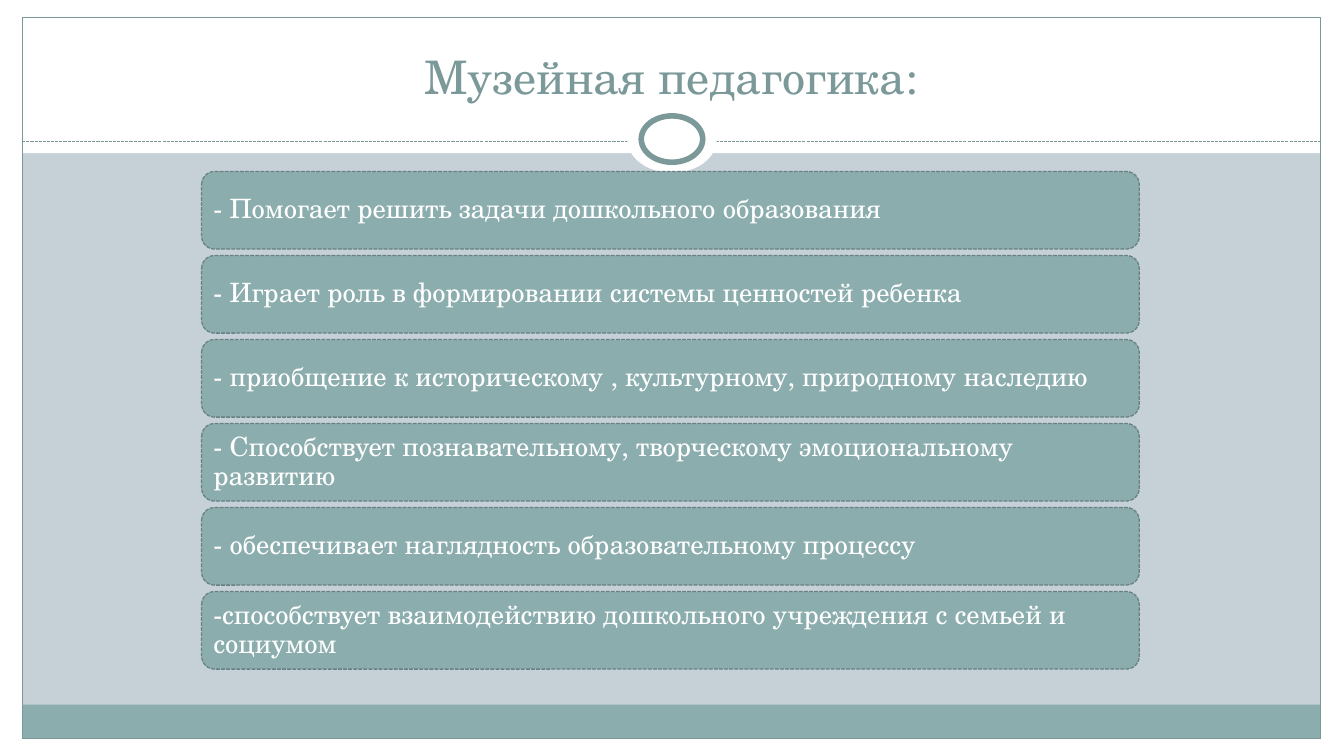
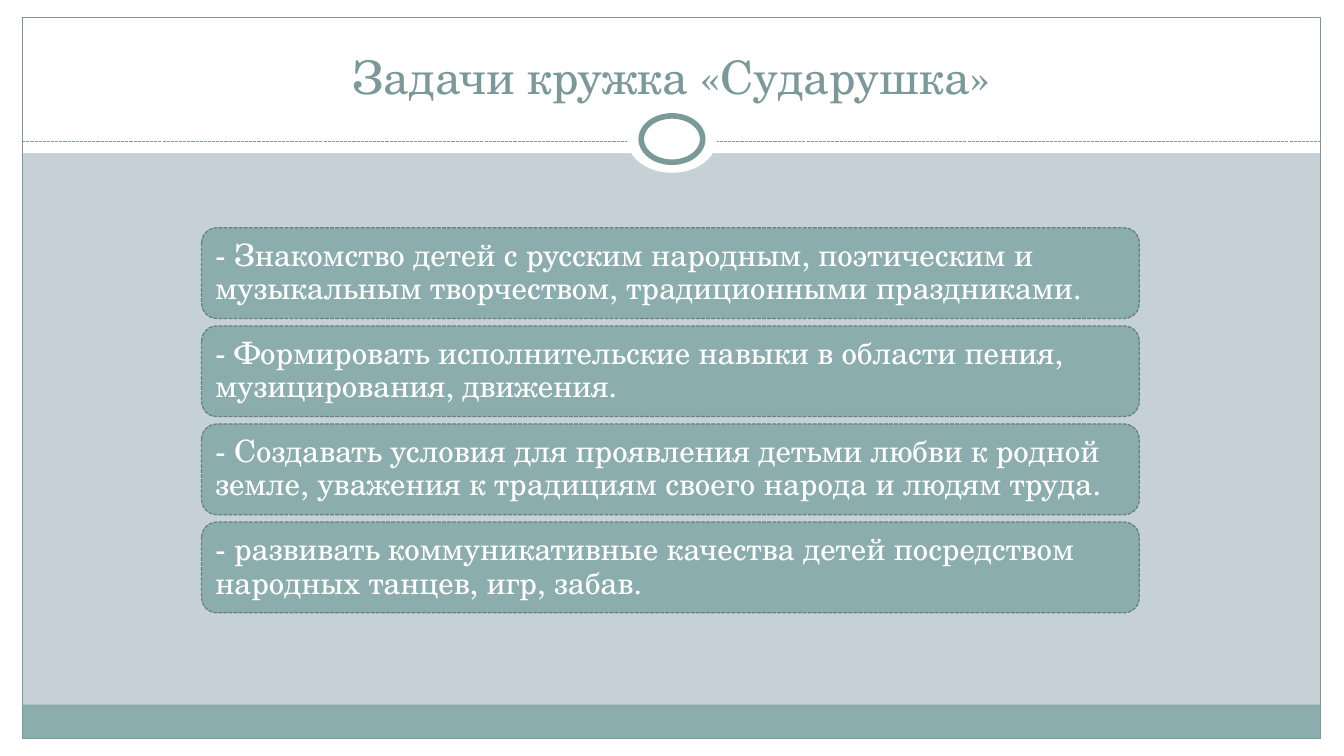
from pptx import Presentation
from pptx.dml.color import RGBColor
from pptx.enum.dml import MSO_LINE
from pptx.enum.shapes import MSO_CONNECTOR, MSO_SHAPE
from pptx.enum.text import MSO_ANCHOR, PP_ALIGN
from pptx.oxml.ns import qn
from pptx.util import Inches, Pt
from lxml import etree

RECT, OVAL, ROUND = MSO_SHAPE.RECTANGLE, MSO_SHAPE.OVAL, MSO_SHAPE.ROUNDED_RECTANGLE
DASH = MSO_LINE.SQUARE_DOT  # saved as sysDot, so set by name below
STRAIGHT = MSO_CONNECTOR.STRAIGHT
LEFT, CENTER = PP_ALIGN.LEFT, PP_ALIGN.CENTER
MIDDLE, BOTTOM = MSO_ANCHOR.MIDDLE, MSO_ANCHOR.BOTTOM

WIDE, HIGH = 13.33, 7.5
FONT = "TeX Gyre Schola"
COLORS = {
    "back": "C5D1D7",
    "white": "FFFFFF",
    "card": "8CADAE",
    "edge": "688081",
    "accent": "7C999A",
}

# Slide content: title, card height, text size, card texts
SLIDES = [
    ("Музейная педагогика:", 0.77, 19, [
        "- Помогает решить задачи дошкольного образования",
        "- Играет роль в формировании системы ценностей ребенка",
        "- приобщение к историческому , культурному, природному наследию",
        "- Способствует познавательному, творческому эмоциональному развитию",
        "- обеспечивает наглядность образовательному процессу",
        "-способствует взаимодействию дошкольного учреждения с семьей и социумом",
    ]),
    ("Задачи кружка «Сударушка»", 0.9, 22, [
        "- Знакомство детей с русским народным, поэтическим и "
        "музыкальным творчеством, традиционными праздниками.",
        "- Формировать исполнительские навыки в области пения, "
        "музицирования, движения.",
        "- Создавать условия для проявления детьми любви к родной "
        "земле, уважения к традициям своего народа и людям труда.",
        "- развивать коммуникативные качества детей посредством "
        "народных танцев, игр, забав.",
    ]),
]


def color(name):
    return RGBColor.from_string(COLORS[name])


def stroke(line, name, width, dashed=False):
    line.color.rgb = color(name)
    line.width = Pt(width)
    if dashed:
        line.dash_style = DASH
        line._ln.find(qn("a:prstDash")).set("val", "sysDash")


def shape(slide, kind, box, fill=None, line=None, width=0.75, dashed=False):
    item = slide.shapes.add_shape(kind, *map(Inches, box))
    item.shadow.inherit = False
    if fill:
        item.fill.solid()
        item.fill.fore_color.rgb = color(fill)
    else:
        item.fill.background()
    if line:
        stroke(item.line, line, width, dashed)
    else:
        item.line.fill.background()
    return item


def write(item, text, size, name, align, anchor):
    frame = item.text_frame
    frame.word_wrap = True
    frame.vertical_anchor = anchor
    para = frame.paragraphs[0]
    para.alignment = align
    run = para.add_run()
    run.text = text
    run.font.name = FONT
    run.font.size = Pt(size)
    run.font.color.rgb = color(name)
    return frame


def draw_frame(slide, box):
    """White margins, bottom band, outline, dashed rule and ring."""
    left, top, width, height = box
    right, base = left + width, top + height
    slide.background.fill.solid()
    slide.background.fill.fore_color.rgb = color("back")
    # Margins and header
    for part in [
        (0, base, WIDE, HIGH - base),
        (0, 0, WIDE, 1.52),
        (0, 0, left, HIGH),
        (right, 0, WIDE - right, HIGH),
    ]:
        shape(slide, RECT, part, "white")
    # Bottom band and outline
    shape(slide, RECT, (left, base - 0.34, width, 0.34), "card")
    shape(slide, RECT, box, line="accent")
    # Dashed rule
    level = Inches(1.4)
    rule = slide.shapes.add_connector(
        STRAIGHT, Inches(left), level, Inches(right), level)
    stroke(rule.line, "accent", 0.75, True)
    etree.SubElement(rule._element.spPr, qn("a:effectLst"))
    # Ring on its white disc
    mid, row = WIDE / 2, 1.38
    for wide, high, line in [(0.89, 0.67, None), (0.61, 0.46, "accent")]:
        place = (mid - wide / 2, row - high / 2, wide, high)
        shape(slide, OVAL, place, "white", line, 4)


def draw_title(slide, box, text):
    item = slide.shapes.add_textbox(*map(Inches, box))
    write(item, text, 33, "accent", CENTER, BOTTOM)


def draw_cards(slide, box, high, size, texts):
    """Stack of cards centred in the box; gap and inset follow text size."""
    left, top, width, height = box
    gap = size * 0.24 / 72
    inset = Pt(size * 0.3)
    step = high + gap
    first = top + (height - step * len(texts) + gap) / 2
    for index, text in enumerate(texts):
        place = (left, first + index * step, width, high)
        card = shape(slide, ROUND, place, "card", "edge", 0.9, True)
        frame = write(card, text, size, "white", LEFT, MIDDLE)
        frame.margin_left = frame.margin_right = inset
        frame.margin_top = frame.margin_bottom = inset
        frame.paragraphs[0].line_spacing = 0.9


def main():
    deck = Presentation()
    deck.slide_width, deck.slide_height = Inches(WIDE), Inches(HIGH)
    blank = deck.slide_layouts[6]
    for title, high, size, texts in SLIDES:
        slide = deck.slides.add_slide(blank)
        draw_frame(slide, (0.22, 0.17, 12.88, 7.16))
        draw_title(slide, (0.44, 0.25, 12.44, 0.83), title)
        draw_cards(slide, (2, 1.7, 9.3, 4.94), high, size, texts)
    deck.save("out.pptx")


if __name__ == "__main__":
    main()
